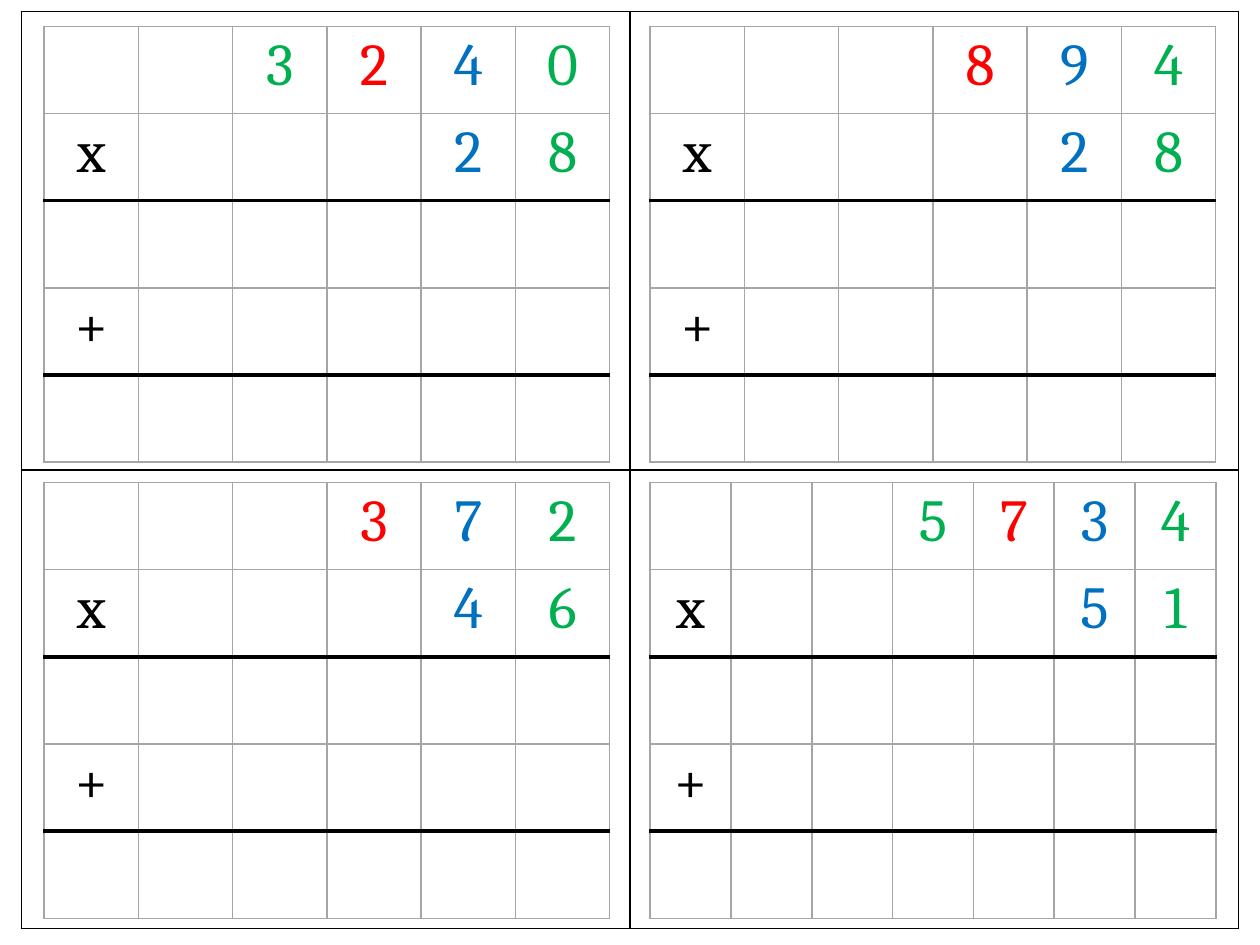
from lxml.etree import SubElement
from pptx import Presentation
from pptx.dml.color import RGBColor
from pptx.enum.text import PP_ALIGN
from pptx.oxml.ns import qn
from pptx.util import Inches, Pt

BLACK, GREY, WHITE = "000000", "A6A6A6", "FFFFFF"
# Units, tens, hundreds, thousands
PLACES = ["00B050", "0070C0", "FF0000", "00B050"]
ROWS = 5
RULED = (1, 3)  # rows with a heavy line below
SUMS = [("3240", "28", 6), ("894", "28", 6),
        ("372", "46", 6), ("5734", "51", 7)]


def rgb(code):
    return RGBColor.from_string(code)


def edge(cell, side, color, width):
    """Draw one border; side is L, R, T or B."""
    line = SubElement(cell._tc.get_or_add_tcPr(), qn("a:ln" + side),
                      w=str(Pt(width)))
    fill = SubElement(line, qn("a:solidFill"))
    SubElement(fill, qn("a:srgbClr"), val=color)
    SubElement(line, qn("a:prstDash"), val="solid")


def write(cell, text, color=BLACK, size=34, font="Cambria"):
    par = cell.text_frame.paragraphs[0]
    par.alignment = PP_ALIGN.CENTER
    run = par.add_run()
    run.text = text
    run.font.name = font
    run.font.size = Pt(size)
    run.font.bold = False
    run.font.color.rgb = rgb(color)


def add_grid(slide, box, rows, cols, color, ruled=()):
    """Add a white table of equal cells, with heavy lines below ruled rows."""
    left, top, width, height = box
    table = slide.shapes.add_table(
        rows, cols, *(Inches(v) for v in box)).table
    table.first_row = table.horz_banding = False
    for col in table.columns:
        col.width = Inches(width / cols)
    for row in table.rows:
        row.height = Inches(height / rows)
    for r in range(rows):
        for c in range(cols):
            cell = table.cell(r, c)
            cell.margin_left = cell.margin_right = Inches(0.05)
            cell.margin_top = cell.margin_bottom = Inches(0.04)
            for side, near in (("L", None), ("R", None),
                               ("T", r - 1), ("B", r)):
                heavy = near in ruled
                edge(cell, side, BLACK if heavy else color,
                     2.25 if heavy else 1)
            cell.fill.solid()
            cell.fill.fore_color.rgb = rgb(WHITE)
    return table


def add_sum(slide, box, upper, lower, cols):
    """Add a long multiplication with its digits set from the right."""
    table = add_grid(slide, box, ROWS, cols, GREY, RULED)
    for r, number in enumerate((upper, lower)):
        for place, digit in enumerate(reversed(number)):
            write(table.cell(r, cols - 1 - place), digit,
                  color=PLACES[place])
    for r, sign in zip(RULED, "x+"):
        write(table.cell(r, 0), sign)


def main():
    deck = Presentation()
    deck.slide_width, deck.slide_height = Inches(10), Inches(7.5)
    slide = deck.slides.add_slide(deck.slide_layouts[6])
    add_grid(slide, (0.17, 0.09, 9.66, 7.28), 2, 2, BLACK)
    for i, (upper, lower, cols) in enumerate(SUMS):
        row, col = divmod(i, 2)
        box = (0.35 + 4.81 * col, 0.21 + 3.62 * row, 4.49, 3.46)
        add_sum(slide, box, upper, lower, cols)
    deck.save("out.pptx")


if __name__ == "__main__":
    main()
